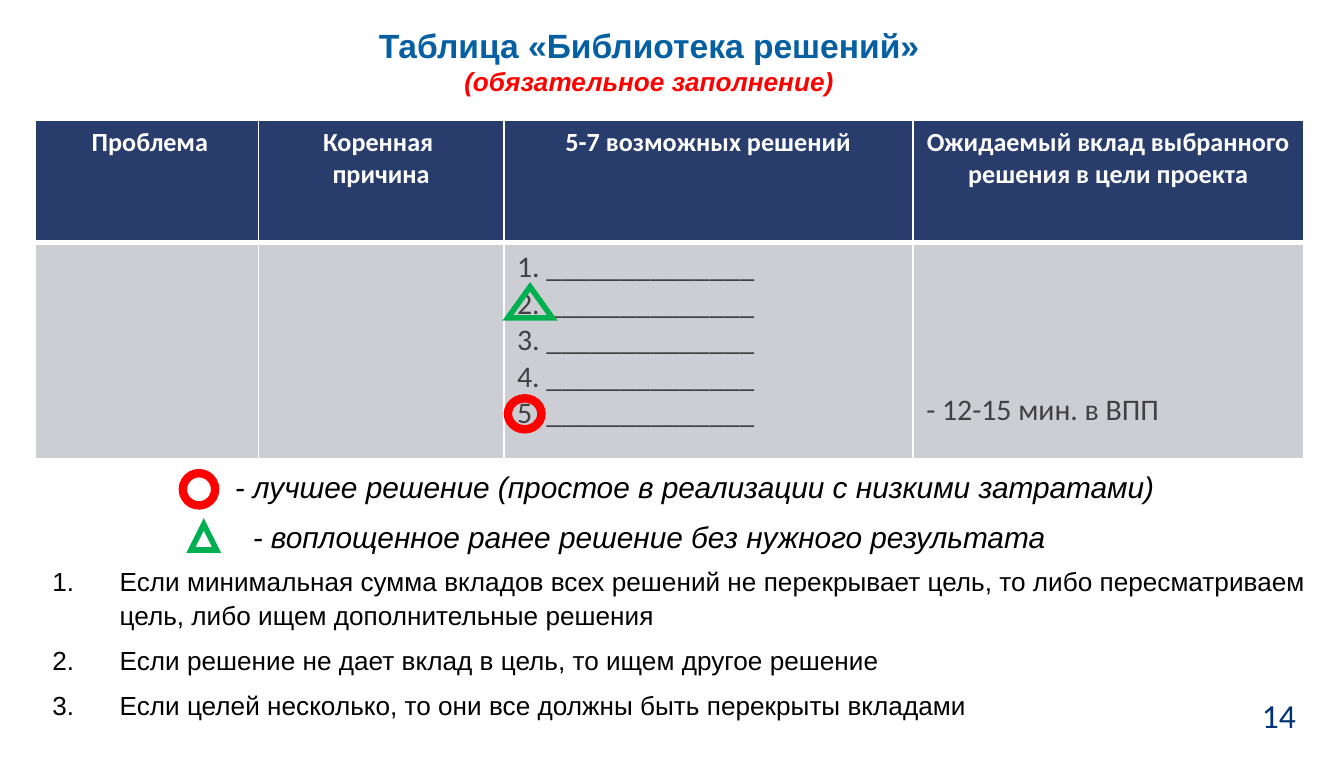
import pptx
import pptx.dml.color
import pptx.enum.shapes
import pptx.enum.text
import pptx.oxml.ns
import pptx.util
from lxml import etree

Pt = pptx.util.Pt
ALIGN = pptx.enum.text.PP_ALIGN
ANCHOR = pptx.enum.text.MSO_ANCHOR
SHAPE = pptx.enum.shapes.MSO_SHAPE
qn = pptx.oxml.ns.qn

COLORS = {
    "title": "045FA3", "red": "FF0000", "green": "00B050", "header": "293D6D",
    "cell": "CDCED4", "cell_text": "414042", "white": "FFFFFF",
    "black": "000000", "number": "003274",
}


def rgb(name):
    return pptx.dml.color.RGBColor.from_string(COLORS[name])


def style(p, size, color, font="Arial", bold=False, italic=False, align=None):
    p.alignment = align
    for r in p.runs:
        f = r.font
        f.name, f.size, f.bold, f.italic = font, Pt(size), bold, italic
        f.color.rgb = rgb(color)


def place(sp, x, y, w, h):
    sp.left, sp.top, sp.width, sp.height = Pt(x), Pt(y), Pt(w), Pt(h)


def add_title(s, x, y, w, h):
    sp = s.shapes.title
    place(sp, x, y, w, h)
    tf = sp.text_frame
    tf.text = "Таблица «Библиотека решений»\n(обязательное заполнение)"
    tf.auto_size = pptx.enum.text.MSO_AUTO_SIZE.NONE
    tf.vertical_anchor = ANCHOR.MIDDLE
    tf.margin_left = tf.margin_right = tf.margin_top = tf.margin_bottom = 0
    style(tf.paragraphs[0], 18, "title", bold=True, align=ALIGN.CENTER)
    style(tf.paragraphs[1], 14, "red", bold=True, italic=True, align=ALIGN.CENTER)


def add_text(s, text, x, y, w, h, size, color, **kw):
    tf = s.shapes.add_textbox(Pt(x), Pt(y), Pt(w), Pt(h)).text_frame
    tf.word_wrap = True
    tf.text = text
    style(tf.paragraphs[0], size, color, **kw)
    return tf


def add_marker(s, kind, color, weight, x, y, w, h):
    sp = s.shapes.add_shape(kind, Pt(x), Pt(y), Pt(w), Pt(h))
    sp.shadow.inherit = False
    sp.fill.background()
    sp.line.color.rgb = rgb(color)
    sp.line.width = Pt(weight)
    # Sharp corners
    ln = sp._element.spPr.find(qn("a:ln"))
    etree.SubElement(ln, qn("a:miter"), lim="800000")


def add_best(s, x, y, w, h):
    add_marker(s, SHAPE.OVAL, "red", 4.5, x, y, w, h)


def add_tried(s, x, y, w, h):
    add_marker(s, SHAPE.ISOSCELES_TRIANGLE, "green", 3, x, y, w, h)


def set_borders(cell, top, bottom):
    tcPr = cell._tc.get_or_add_tcPr()
    for side, weight in zip("LRTB", (1, 1, top, bottom)):
        ln = etree.SubElement(tcPr, qn(f"a:ln{side}"), w=str(Pt(weight)))
        fill = etree.SubElement(ln, qn("a:solidFill"))
        etree.SubElement(fill, qn("a:srgbClr"), val=COLORS["white"])


def add_solutions_table(s, x, y, w, h):
    widths = (119.5, 131.4, 219.2, 209.3)
    header_h = 65.5
    blanks = "\n".join(f"{i}. ______________" for i in range(1, 6))
    rows = (
        (" Проблема", "Коренная  причина", "5-7 возможных решений",
         "Ожидаемый вклад выбранного решения в цели проекта"),
        ("", "", blanks, "- 12-15 мин. в ВПП"),
    )
    table = s.shapes.add_table(2, 4, Pt(x), Pt(y), Pt(w), Pt(h)).table
    table.horz_banding = False
    for col, width in zip(table.columns, widths):
        col.width = Pt(width)
    table.rows[0].height, table.rows[1].height = Pt(header_h), Pt(h - header_h)
    for i, row in enumerate(rows):
        for j, text in enumerate(row):
            cell = table.cell(i, j)
            set_borders(cell, *((1, 3) if i == 0 else (3, 1)))
            cell.fill.solid()
            cell.fill.fore_color.rgb = rgb("cell" if i else "header")
            cell.text = text
            for p in cell.text_frame.paragraphs:
                if i == 0:
                    style(p, 14, "white", "Calibri", bold=True, align=ALIGN.CENTER)
                else:
                    style(p, 16, "cell_text", "Calibri")
    # The contribution lies low in its cell
    cell.vertical_anchor = ANCHOR.BOTTOM
    cell.margin_bottom = Pt(16.5)

    # Marks on solutions 2 and 5
    solutions_x = x + sum(widths[:2])
    add_tried(s, solutions_x + 2.2, y + 89.3, 23.8, 16.6)
    add_best(s, solutions_x + 2.2, y + 149, 18, 16.6)


def add_legend_text(s, text, x, y, w, h):
    tf = add_text(s, text, x, y, w, h, 16, "black", italic=True, align=ALIGN.CENTER)
    tf.paragraphs[0].line_spacing = 1.1


def add_legend(s, x, y):
    add_best(s, x, y, 17.3, 17.3)
    add_legend_text(s, "- лучшее решение (простое в реализации с низкими затратами)",
                    x - 50.5, y - 7.9, 649.4, 38.2)
    add_tried(s, x + 4.3, y + 27.4, 13.7, 13.7)
    add_legend_text(s, "- воплощенное ранее решение без нужного результата",
                    x - 74.9, y + 18.8, 649.4, 38.2)


def add_rules(s, x, y, w, h):
    sp = s.placeholders[1]
    place(sp, x, y, w, h)
    tf = sp.text_frame
    tf.auto_size = pptx.enum.text.MSO_AUTO_SIZE.NONE
    tf.text = "\n".join((
        "Если минимальная сумма вкладов всех решений не перекрывает цель, "
        "то либо пересматриваем цель, либо ищем дополнительные решения",
        "Если решение не дает вклад в цель, то ищем другое решение",
        "Если целей несколько, то они все должны быть перекрыты вкладами",
    ))
    for i, p in enumerate(tf.paragraphs):
        pPr = p._p.get_or_add_pPr()
        pPr.set("marL", str(Pt(36)))
        pPr.set("indent", str(Pt(-36)))
        etree.SubElement(pPr, qn("a:buFont"), typeface="+mj-lt")
        etree.SubElement(pPr, qn("a:buAutoNum"), type="arabicPeriod")
        p.line_spacing = 1.1
        p.space_before = Pt(2.8 if i else 0)
        p.space_after = Pt(2.8)
        style(p, 14, "black")


def main():
    prs = pptx.Presentation()
    prs.slide_width, prs.slide_height = Pt(720), Pt(405.36)
    s = prs.slides.add_slide(prs.slide_layouts[1])
    add_title(s, 43.9, 9.4, 607.7, 46)
    add_solutions_table(s, 19, 64.3, 679.4, 181.5)
    add_legend(s, 98, 253.4)
    add_rules(s, 20.9, 297.4, 689.8, 92)
    # Slide number
    add_text(s, "14", 668.9, 368.6, 49.7, 29.5, 18, "number", font="Calibri")
    prs.save("out.pptx")


if __name__ == "__main__":
    main()
